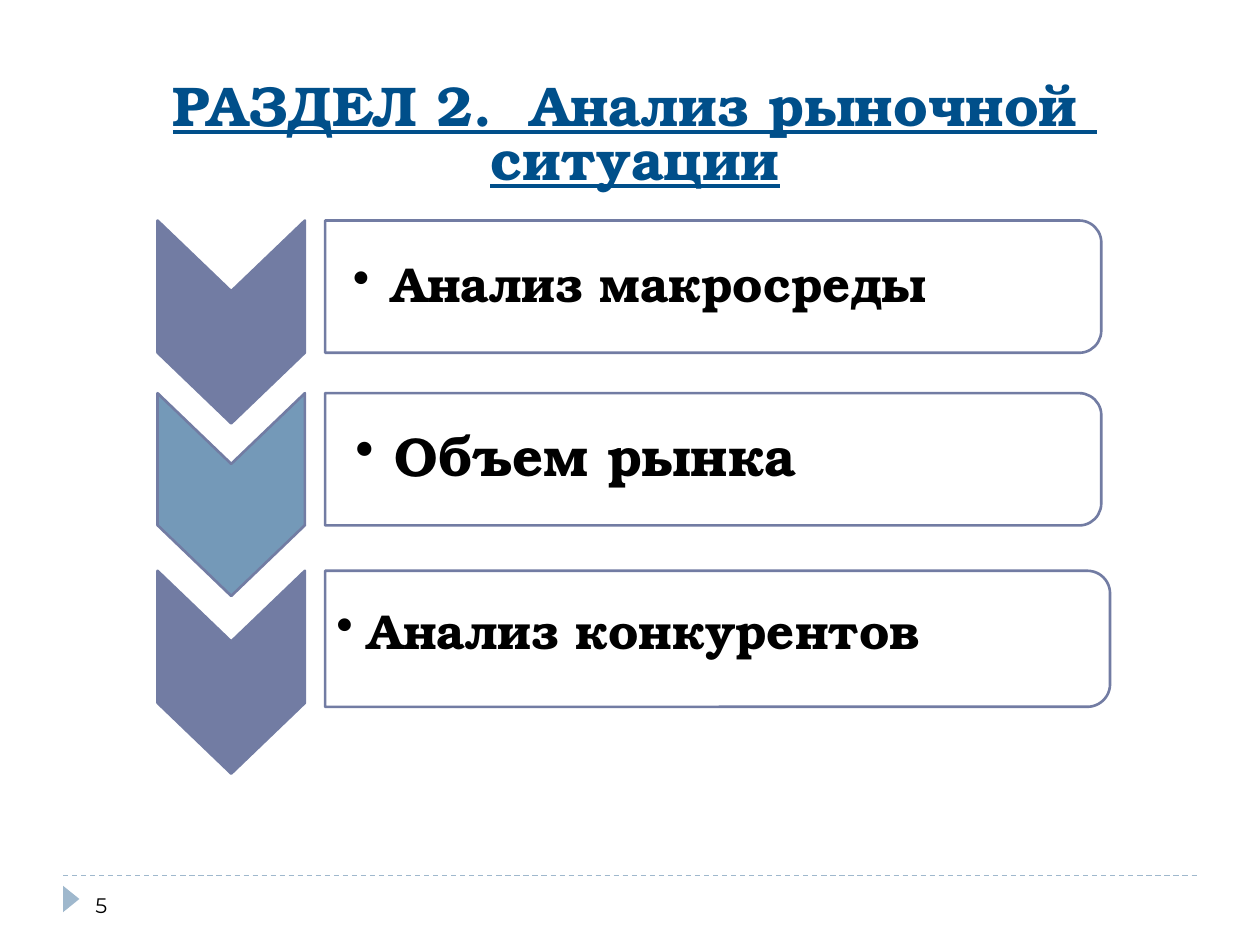
"""Build the slide on market analysis: three chevron steps with labels."""
from typing import NamedTuple

from lxml import etree
from pptx import Presentation
from pptx import util as u
from pptx.dml.color import RGBColor
from pptx.enum import dml, shapes, text
from pptx.oxml.ns import qn

WHITE = RGBColor(0xFF, 0xFF, 0xFF)
BLACK = RGBColor(0x00, 0x00, 0x00)
NAVY = RGBColor(0x00, 0x4F, 0x8A)
VIOLET = RGBColor(0x72, 0x7C, 0xA3)
STEEL = RGBColor(0x74, 0x99, 0xB8)
PALE = RGBColor(0x9F, 0xB8, 0xCD)
SERIF, SANS = "TeX Gyre Bonum", "Montserrat"
WIDTH, HEIGHT = 10, 7.5
ARROW_COL, ARROW_W, ARROW_H = 1.25, 1.17, 1.61
BOX_COL = 2.58


class Area(NamedTuple):
    left: float
    top: float
    width: float
    height: float


class Step(NamedTuple):
    label: str
    top: float
    color: RGBColor
    box_w: float
    box_h: float
    size: int
    inset: float
    indent: float
    rise: float


STEPS = (
    Step("Анализ макросреды", 1.75, VIOLET, 6.16, 1.05, 28, 0.22, 0.31, 0),
    Step("Объем рынка", 3.12, STEEL, 6.16, 1.05, 31, 0.24, 0.31, 0),
    Step("Анализ конкурентов", 4.53, VIOLET, 6.23, 1.08, 28, 0.09, 0.25, 0.04),
)


def add_turned(slide, kind, area: Area, fill: RGBColor, line: RGBColor | None = None):
    """Add a preset turned by 90 degrees so that it covers the given area."""
    left = area.left + (area.width - area.height) / 2
    top = area.top + (area.height - area.width) / 2
    sp = slide.shapes.add_shape(
        kind, u.Inches(left), u.Inches(top), u.Inches(area.height), u.Inches(area.width))
    sp.rotation = 90
    sp.shadow.inherit = False
    sp.fill.solid()
    sp.fill.fore_color.rgb = fill
    if line is None:
        sp.line.fill.background()
    else:
        sp.line.color.rgb = line
        sp.line.width = u.Pt(1.5)
    return sp


def add_text(slide, words: str, area: Area, font: str, size: int, color: RGBColor,
             anchor=text.MSO_ANCHOR.MIDDLE, bold: bool = False):
    """Add a wrapped one-paragraph text box and return its frame, paragraph and run."""
    tf = slide.shapes.add_textbox(*(u.Inches(v) for v in area)).text_frame
    tf.word_wrap = True
    tf.vertical_anchor = anchor
    p = tf.paragraphs[0]
    r = p.add_run()
    r.text = words
    r.font.name, r.font.size, r.font.bold = font, u.Pt(size), bold
    r.font.color.rgb = color
    return tf, p, r


def add_bullet(p, indent: float) -> None:
    """Give the paragraph a round bullet with a hanging indent."""
    pPr = p._p.get_or_add_pPr()
    pPr.set("marL", str(u.Inches(indent)))
    pPr.set("indent", str(-u.Inches(indent)))
    etree.SubElement(pPr, qn("a:buChar")).set("char", "•")


def add_step(slide, step: Step) -> None:
    """Draw a down chevron, its label box and the bulleted label."""
    arrow = add_turned(slide, shapes.MSO_SHAPE.CHEVRON,
                       Area(ARROW_COL, step.top, ARROW_W, ARROW_H), step.color, VIOLET)
    arrow.adjustments[0] = 0.48
    box = Area(BOX_COL, step.top, step.box_w, step.box_h)
    add_turned(slide, shapes.MSO_SHAPE.ROUND_2_SAME_RECTANGLE, box, WHITE, VIOLET)
    tf, p, _ = add_text(slide, step.label, box._replace(top=step.top - step.rise),
                        SERIF, step.size, BLACK, bold=True)
    tf.margin_left = u.Inches(step.inset)
    tf.margin_right = tf.margin_top = tf.margin_bottom = u.Inches(0.07)
    p.line_spacing = 0.9
    add_bullet(p, step.indent)


def add_footer(slide) -> None:
    """Draw the dashed rule, the marker and the slide number."""
    margin, y = 0.05 * WIDTH, u.Inches(6.95)
    rule = slide.shapes.add_connector(
        shapes.MSO_CONNECTOR.STRAIGHT, u.Inches(margin), y, u.Inches(WIDTH - margin), y)
    rule.line.color.rgb = PALE
    rule.line.width = u.Pt(0.75)
    rule.line.dash_style = dml.MSO_LINE.DASH
    etree.SubElement(rule._element.spPr, qn("a:effectLst"))
    add_turned(slide, shapes.MSO_SHAPE.ISOSCELES_TRIANGLE,
               Area(margin, 7.03, 0.13, 0.21), PALE)
    add_text(slide, "5", Area(0.66, 6.83, 2.33, 0.5), SANS, 12, BLACK,
             text.MSO_ANCHOR.BOTTOM)


def main() -> None:
    """Create the presentation and save it."""
    prs = Presentation()
    prs.slide_width, prs.slide_height = u.Inches(WIDTH), u.Inches(HEIGHT)
    slide = prs.slides.add_slide(prs.slide_layouts[6])
    add_footer(slide)
    _, p, r = add_text(slide, "РАЗДЕЛ 2.  Анализ рыночной  ситуации",
                       Area(0.5, 0.63, 9.08, 0.92), SERIF, 32, NAVY, bold=True)
    p.alignment = text.PP_ALIGN.CENTER
    p.line_spacing = 0.8
    r.font.underline = True
    for step in STEPS:
        add_step(slide, step)
    prs.save("out.pptx")


if __name__ == "__main__":
    main()
